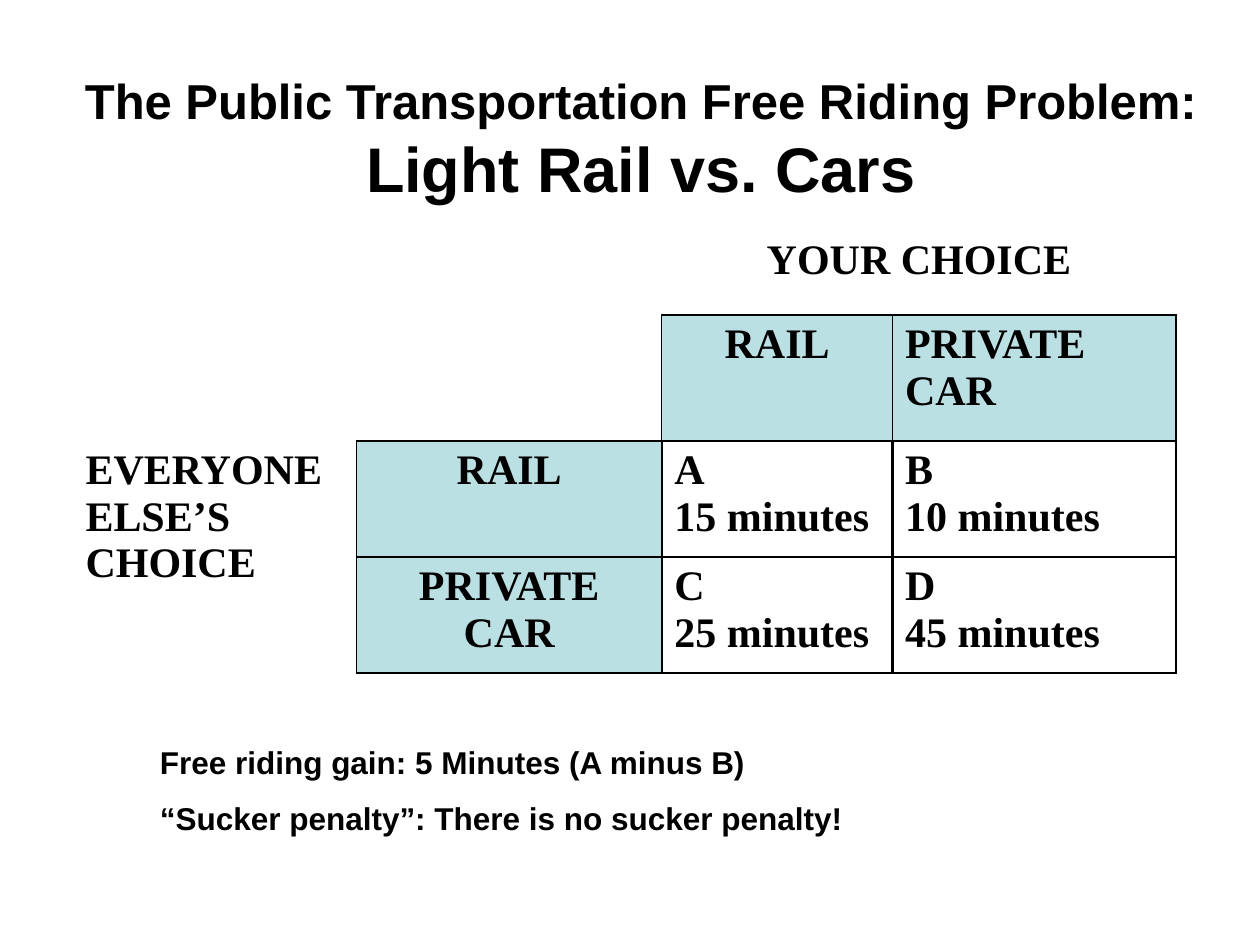
from lxml import etree
from pptx import Presentation
from pptx.dml.color import RGBColor
from pptx.enum.text import MSO_ANCHOR, MSO_AUTO_SIZE, PP_ALIGN
from pptx.oxml.ns import qn
from pptx.util import Cm, Pt

BLACK = RGBColor(0x00, 0x00, 0x00)
TEAL = RGBColor(0xBB, 0xE0, 0xE3)
LEFT, CENTER = PP_ALIGN.LEFT, PP_ALIGN.CENTER
TOP, MIDDLE = MSO_ANCHOR.TOP, MSO_ANCHOR.MIDDLE
NO_FIT = MSO_AUTO_SIZE.NONE
PLAIN = "{2D5ABB26-0587-4C30-8999-92F81FD0307C}"  # no style, no grid


def style(para, size, face, align):
    para.alignment = align
    for run in para.runs:
        run.font.size = Pt(size)
        run.font.name = face
        run.font.bold = True
        run.font.color.rgb = BLACK


def frame(cell, width):
    props = cell._tc.get_or_add_tcPr()
    for side in ("a:lnL", "a:lnR", "a:lnT", "a:lnB"):
        line = etree.SubElement(props, qn(side), w=str(Pt(width)))
        fill = etree.SubElement(line, qn("a:solidFill"))
        etree.SubElement(fill, qn("a:srgbClr"), val=str(BLACK))


prs = Presentation()
prs.slide_width, prs.slide_height = Cm(25.4), Cm(19.05)
slide = prs.slides.add_slide(prs.slide_layouts[1])
title, body = slide.placeholders

# Title: one paragraph in two sizes
title.left, title.top, title.width, title.height = Cm(1.07), Cm(1.29), Cm(23.7), Cm(2.97)
text = title.text_frame
text.text = "The Public Transportation Free Riding Problem: "
text.auto_size, text.vertical_anchor = NO_FIT, MIDDLE
para = text.paragraphs[0]
para.add_run().text = "Light Rail vs. Cars"
style(para, 28, "Arial", CENTER)
para.runs[1].font.size = Pt(36)

# Payoff table
cols = [5.72, 6.15, 4.65, 5.72]
rows = [1.7, 2.54, 2.34, 2.34]
cells = [
    ["", "", "YOUR CHOICE", ""],
    ["", "", "RAIL", "PRIVATE CAR"],
    ["EVERYONE ELSE’S\nCHOICE", "RAIL", "A\n15 minutes", "B\n10 minutes"],
    ["", "PRIVATE CAR", "C\n25 minutes", "D\n45 minutes"],
]
centered = [(0, 2), (1, 2), (2, 1), (3, 1)]
heads = [(1, 2), (1, 3), (2, 1), (3, 1)]

shape = slide.shapes.add_table(4, 4, Cm(1.47), Cm(4.65), Cm(sum(cols)), Cm(sum(rows)))
table = shape.table
table.first_row = table.horz_banding = False
table._tbl.tblPr.find(qn("a:tableStyleId")).text = PLAIN
for col, width in zip(table.columns, cols):
    col.width = Cm(width)
for row, height in zip(table.rows, rows):
    row.height = Cm(height)
table.cell(0, 2).merge(table.cell(0, 3))
table.cell(2, 0).merge(table.cell(3, 0))

for r, row in enumerate(cells):
    for c, words in enumerate(row):
        cell = table.cell(r, c)
        if words:
            cell.text_frame.text = words
            for para in cell.text_frame.paragraphs:
                style(para, 24, "Times New Roman", CENTER if (r, c) in centered else LEFT)
        if (r, c) in heads:
            frame(cell, 1)
            cell.fill.solid()
            cell.fill.fore_color.rgb = TEAL
        else:
            if r > 1 and c > 1:
                frame(cell, 1.5)
            cell.fill.background()

# Conclusions
body.left, body.top, body.width, body.height = Cm(2.97), Cm(14.86), Cm(20.12), Cm(2.16)
text = body.text_frame
text.text = "Free riding gain: 5 Minutes (A minus B)\n“Sucker penalty”: There is no sucker penalty!"
text.auto_size, text.vertical_anchor = NO_FIT, TOP
for para in text.paragraphs:
    style(para, 18, "Arial", LEFT)
    para.space_before = Pt(10)
    props = para._p.get_or_add_pPr()
    props.set("marL", "0")
    props.set("indent", "0")
    etree.SubElement(props, qn("a:buNone"))

prs.save("out.pptx")
